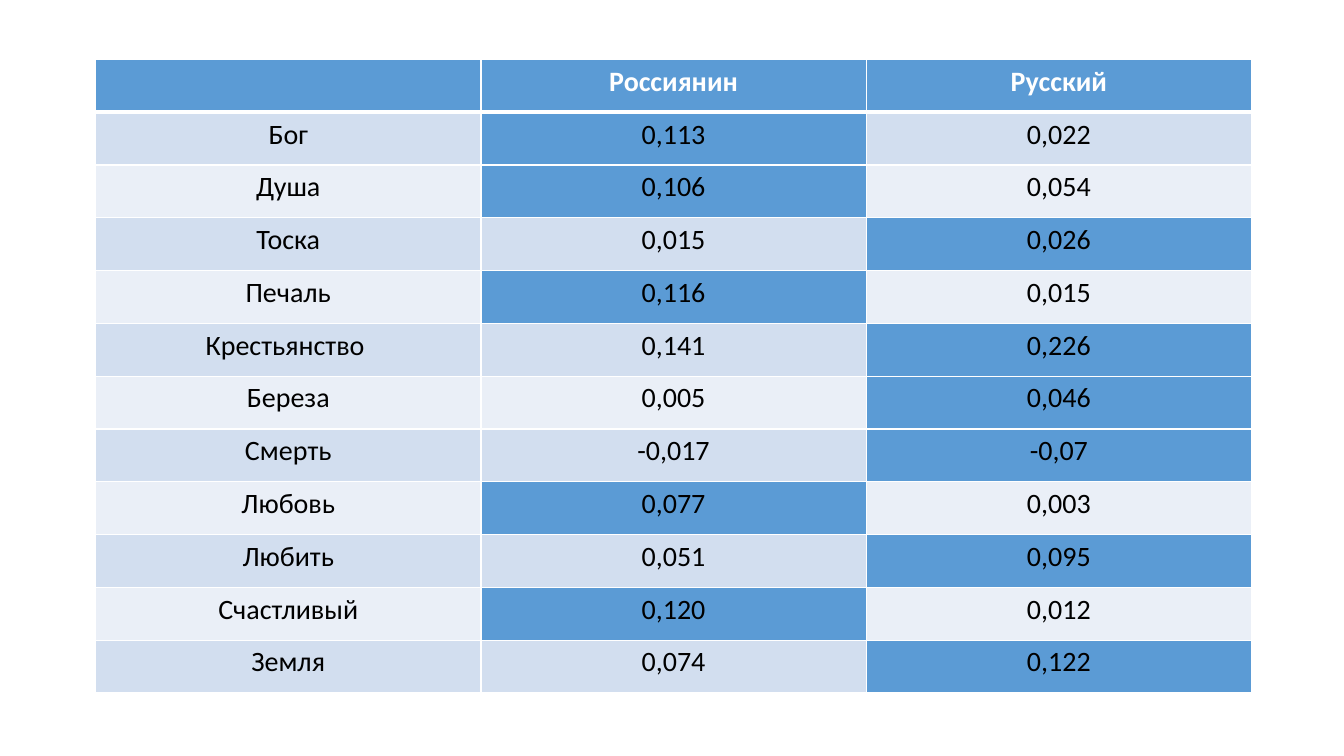
from lxml.etree import SubElement
from pptx import Presentation
from pptx.dml.color import RGBColor
from pptx.enum.text import PP_ALIGN
from pptx.oxml.ns import qn
from pptx.util import Cm, Pt

WHITE, BLACK = "FFFFFF", "000000"
ACCENT = "5B9BD5"
BANDS = ["D2DEEF", "EAEFF7"]
COLUMN_WIDTH, ROW_HEIGHT = Cm(9.71), Cm(1.33)

HEADER = ["", "Россиянин", "Русский"]
WORDS = [
    ["Бог", "0,113", "0,022"],
    ["Душа", "0,106", "0,054"],
    ["Тоска", "0,015", "0,026"],
    ["Печаль", "0,116", "0,015"],
    ["Крестьянство ", "0,141", "0,226"],
    ["Береза", "0,005", "0,046"],
    ["Смерть", "-0,017", "-0,07"],
    ["Любовь", "0,077", "0,003"],
    ["Любить", "0,051", "0,095"],
    ["Счастливый", "0,120", "0,012"],
    ["Земля", "0,074", "0,122"],
]


def color(value):
    return RGBColor.from_string(value)


def strength(text):
    """Absolute value of a number written with a decimal comma."""
    return abs(float(text.replace(",", ".")))


def set_borders(cell, top, bottom):
    properties = cell._tc.get_or_add_tcPr()
    widths = {"a:lnL": 1, "a:lnR": 1, "a:lnT": top, "a:lnB": bottom}
    for tag, width in widths.items():
        line = SubElement(properties, qn(tag), w=str(Pt(width)))
        fill = SubElement(line, qn("a:solidFill"))
        SubElement(fill, qn("a:srgbClr"), val=WHITE)


def fill_cell(cell, text, background, text_color, bold):
    cell.fill.solid()
    cell.fill.fore_color.rgb = color(background)
    if not text:
        return
    paragraph = cell.text_frame.paragraphs[0]
    paragraph.alignment = PP_ALIGN.CENTER
    run = paragraph.add_run()
    run.text = text
    text_format = {"name": "Calibri", "size": Pt(20), "bold": bold}
    for name, value in text_format.items():
        setattr(run.font, name, value)
    run.font.color.rgb = color(text_color)


def add_word_table(slide):
    rows = [HEADER] + WORDS
    table = slide.shapes.add_table(
        len(rows), len(HEADER), Cm(2.41), Cm(1.5),
        COLUMN_WIDTH * len(HEADER), ROW_HEIGHT * len(rows)).table
    for column in table.columns:
        column.width = COLUMN_WIDTH
    for row in table.rows:
        row.height = ROW_HEIGHT

    for column, text in enumerate(HEADER):
        cell = table.cell(0, column)
        set_borders(cell, top=1, bottom=3)
        fill_cell(cell, text, ACCENT, WHITE, bold=True)

    for row, texts in enumerate(WORDS, start=1):
        strongest = max((1, 2), key=lambda column: strength(texts[column]))
        band = BANDS[(row - 1) % 2]
        for column, text in enumerate(texts):
            cell = table.cell(row, column)
            set_borders(cell, top=3 if row == 1 else 1, bottom=1)
            background = ACCENT if column == strongest else band
            fill_cell(cell, text, background, BLACK, bold=False)


def main():
    presentation = Presentation()
    presentation.slide_width = Cm(33.87)
    presentation.slide_height = Cm(19.05)
    slide = presentation.slides.add_slide(presentation.slide_layouts[6])
    add_word_table(slide)
    presentation.save("out.pptx")


if __name__ == "__main__":
    main()
